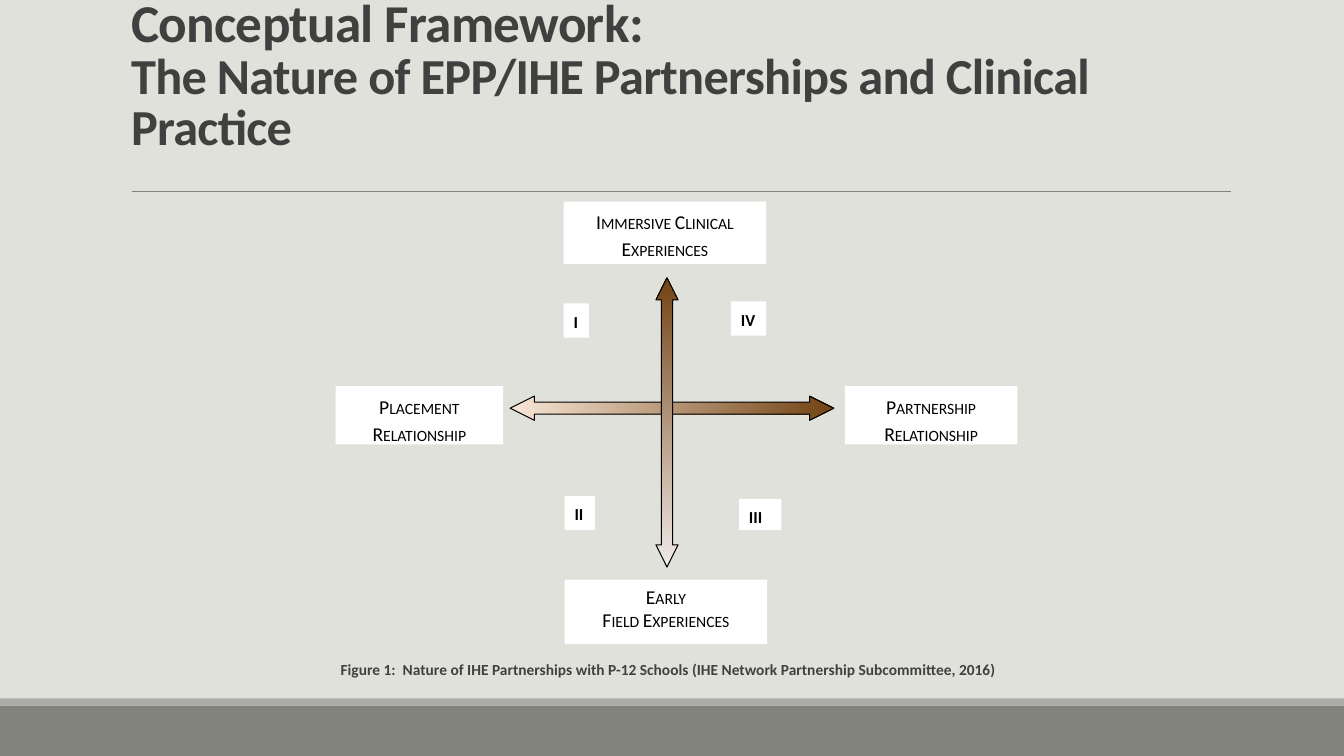
from lxml import etree
from pptx import Presentation
from pptx.dml.color import RGBColor
from pptx.enum.shapes import MSO_CONNECTOR, MSO_SHAPE
from pptx.enum.text import MSO_ANCHOR, MSO_AUTO_SIZE, PP_ALIGN
from pptx.oxml.ns import qn
from pptx.util import Inches, Pt

RECTANGLE, DOUBLE_ARROW = MSO_SHAPE.RECTANGLE, MSO_SHAPE.LEFT_RIGHT_ARROW
STRAIGHT = MSO_CONNECTOR.STRAIGHT
TOP, BOTTOM = MSO_ANCHOR.TOP, MSO_ANCHOR.BOTTOM
LEFT, CENTER = PP_ALIGN.LEFT, PP_ALIGN.CENTER
NO_AUTOSIZE = MSO_AUTO_SIZE.NONE

WIDTH, HEIGHT = 13.33, 7.5
FONT = "Calibri"
BLACK, WHITE, DARK_GRAY = "000000", "FFFFFF", "404040"
BROWN = "724314"


def color(hex_string):
    return RGBColor.from_string(hex_string)


def inches(*lengths):
    return [Inches(length) for length in lengths]


def add_run(paragraph, text, size, hex_string, bold=False, **properties):
    run = paragraph.add_run()
    run.text = text
    font = run.font
    font.name, font.size, font.bold = FONT, Pt(size), bold
    font.color.rgb = color(hex_string)
    for name, value in properties.items():
        font._element.set(name, value)


def add_filled_shape(slide, kind, box, fill=None):
    shape = slide.shapes.add_shape(kind, *inches(*box))
    shape.shadow.inherit = False
    shape.line.fill.background()
    if fill:
        shape.fill.solid()
        shape.fill.fore_color.rgb = color(fill)
    return shape


def add_backdrop(slide):
    """Background, two footer bands and the rule under the title."""
    slide.background.fill.solid()
    slide.background.fill.fore_color.rgb = color("E1E1DB")
    footer_top, stripe = 7, 0.07
    add_filled_shape(slide, RECTANGLE,
                     (0, footer_top, WIDTH, HEIGHT - footer_top), "82847C")
    add_filled_shape(slide, RECTANGLE,
                     (0, footer_top - stripe, WIDTH, stripe), "ACADA8")
    rule = slide.shapes.add_connector(STRAIGHT, *inches(1.31, 1.9, 12.21, 1.9))
    rule.line.color.rgb = color("808080")
    rule.line.width = Pt(0.5)
    etree.SubElement(rule._element.spPr, qn("a:effectLst"))


def add_title(slide, box):
    title = slide.shapes.title
    title.left, title.top, title.width, title.height = inches(*box)
    frame = title.text_frame
    frame.auto_size, frame.vertical_anchor = NO_AUTOSIZE, BOTTOM
    frame.word_wrap = True
    paragraph = frame.paragraphs[0]
    paragraph.alignment, paragraph.line_spacing = LEFT, 0.85
    add_run(paragraph, "Conceptual Framework:", 38, DARK_GRAY, True, spc="-50")
    paragraph.add_line_break()
    add_run(paragraph, "The Nature of EPP/IHE Partnerships and Clinical Practice",
            36, DARK_GRAY, True, spc="-50")


def add_card(slide, box, lines, spacing=1.15, after=10, quadrant=False):
    """White box: an axis end in small capitals, or a bold quadrant number."""
    frame = add_filled_shape(slide, RECTANGLE, box, WHITE).text_frame
    frame.word_wrap, frame.vertical_anchor = not quadrant, TOP
    for index, line in enumerate(lines):
        paragraph = frame.add_paragraph() if index else frame.paragraphs[0]
        paragraph.alignment = LEFT if quadrant else CENTER
        paragraph.line_spacing, paragraph.space_after = spacing, Pt(after)
        if quadrant:
            add_run(paragraph, line, 12, BLACK, True)
        else:
            add_run(paragraph, line, 14, BLACK, cap="small")


def add_axis(slide, box, light, rotation=0):
    """Double arrow that shades from light at its start to brown at its end."""
    arrow = add_filled_shape(slide, DOUBLE_ARROW, box)
    arrow.adjustments[0], arrow.adjustments[1] = 0.5, 1
    arrow.rotation = rotation
    arrow.fill.gradient()
    arrow.fill.gradient_angle = 0
    for stop, position, shade in zip(arrow.fill.gradient_stops, (0, 1), (light, BROWN)):
        stop.position = position
        stop.color.rgb = color(shade)
    arrow.line.color.rgb = color(BLACK)
    arrow.line.width = Pt(0.75)


def add_framework(slide):
    """Crossed axes with their ends and the four quadrants."""
    add_axis(slide, (5.06, 3.93, 3.21, 0.24), "F8E7D6")
    add_axis(slide, (5.18, 4.08, 2.87, 0.22), "F1EAE8", 270)

    add_card(slide, (5.59, 2, 2.01, 0.62), ["Immersive Clinical Experiences"])
    add_card(slide, (3.33, 3.83, 1.66, 0.58), ["Placement Relationship"])
    add_card(slide, (8.38, 3.83, 1.71, 0.58), ["Partnership Relationship"])
    add_card(slide, (5.6, 5.75, 2.01, 0.64), ["Early", "Field Experiences"], 1, 0)

    quadrants = {
        "I": (5.59, 3.01, 0.25, 0.34),
        "II": (5.6, 4.92, 0.3, 0.34),
        "III": (7.33, 4.95, 0.42, 0.31),
        "IV": (7.25, 2.99, 0.35, 0.34),
    }
    for number, box in quadrants.items():
        add_card(slide, box, [number], quadrant=True)


def add_caption(slide, box):
    frame = slide.shapes.add_textbox(*inches(*box)).text_frame
    frame.word_wrap = True
    frame.margin_left = frame.margin_right = 0
    paragraph = frame.paragraphs[0]
    paragraph.alignment, paragraph.line_spacing = CENTER, 0.9
    paragraph.space_before, paragraph.space_after = Pt(12), Pt(2)
    add_run(paragraph, "Figure 1:  Nature of IHE Partnerships with P-12 Schools "
            "(IHE Network Partnership Subcommittee, 2016)", 11, DARK_GRAY, True)


def main():
    presentation = Presentation()
    presentation.slide_width, presentation.slide_height = inches(WIDTH, HEIGHT)
    slide = presentation.slides.add_slide(presentation.slide_layouts[5])
    add_backdrop(slide)
    add_title(slide, (1.2, 0.15, 11, 1.45))
    add_framework(slide)
    add_caption(slide, (1.94, 6.52, 9.38, 0.81))
    presentation.save("out.pptx")


if __name__ == "__main__":
    main()
